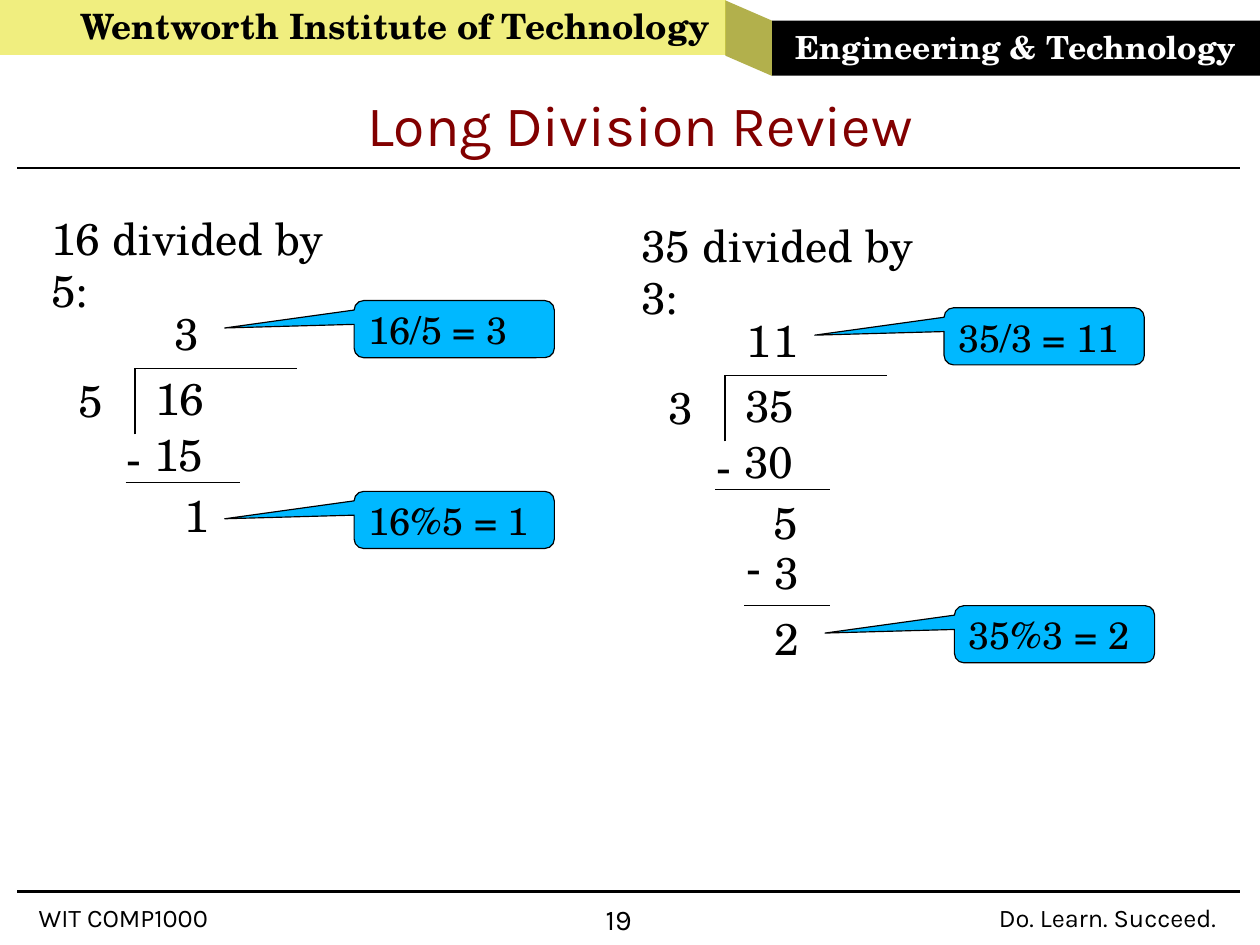
from pptx import Presentation
from pptx.dml.color import RGBColor
from pptx.enum.shapes import MSO_CONNECTOR, MSO_SHAPE
from pptx.enum.text import MSO_ANCHOR, PP_ALIGN
from pptx.oxml.ns import qn
from pptx.util import Cm, Pt
from lxml.etree import SubElement

SERIF = "TeX Gyre Schola"
SANS = "Karla"
BLACK = "000000"
DIGIT, PAIR, DASH = 1.07, 1.63, 0.84


def color(code):
    return RGBColor.from_string(code)


def write(shape, text, size, font=SERIF, ink=BLACK, bold=False, space=0.98,
          align=PP_ALIGN.LEFT, anchor=MSO_ANCHOR.TOP, wrap=True, inset=None):
    frame = shape.text_frame
    frame.word_wrap = wrap
    frame.vertical_anchor = anchor
    if inset is not None:
        left, top = inset
        frame.margin_left, frame.margin_top = Cm(left), Cm(top)
        frame.margin_right = frame.margin_bottom = 0
    para = frame.paragraphs[0]
    para.alignment = align
    para.line_spacing = space
    run = para.add_run()
    run.text = text
    run.font.size = Pt(size)
    run.font.name = font
    run.font.bold = bold
    run.font.color.rgb = color(ink)


def label(slide, text, x, y, width, height=1.42, size=28, **style):
    box = slide.shapes.add_textbox(Cm(x), Cm(y), Cm(width), Cm(height))
    write(box, text, size, **style)


def line(slide, x1, y1, x2, y2, width=0.75):
    rule = slide.shapes.add_connector(
        MSO_CONNECTOR.STRAIGHT, Cm(x1), Cm(y1), Cm(x2), Cm(y2))
    rule.line.color.rgb = color(BLACK)
    rule.line.width = Pt(width)
    SubElement(rule._element.spPr, qn("a:effectLst"))


def block(slide, kind, x, y, width, height, fill, alpha=100):
    shape = slide.shapes.add_shape(kind, Cm(x), Cm(y), Cm(width), Cm(height))
    shape.shadow.inherit = False
    shape.fill.solid()
    shape.fill.fore_color.rgb = color(fill)
    shape.line.fill.background()
    if alpha < 100:
        tone = shape._element.spPr.find(qn("a:solidFill"))[0]
        SubElement(tone, qn("a:alpha")).set("val", str(alpha * 1000))
    return shape


def callout(slide, text, x, y):
    shape = block(slide, MSO_SHAPE.ROUNDED_RECTANGULAR_CALLOUT,
                  x, y, 4.45, 1.27, "00B8FF")
    for index, value in enumerate((-1.146, -0.02, 0.167)):
        shape.adjustments[index] = value
    shape.line.color.rgb = color(BLACK)
    shape.line.width = Pt(0.75)
    write(shape, text, 24)


def header(slide):
    school = block(slide, MSO_SHAPE.RECTANGLE, 0, 0, 16.13, 1.22, "E3DE00", 50)
    write(school, "Wentworth Institute of Technology", 22, bold=True,
          anchor=MSO_ANCHOR.MIDDLE, wrap=False, inset=(1.78, 0))
    fold = block(slide, MSO_SHAPE.PARALLELOGRAM, 15.8, 0.33, 1.68, 1.04, "928F00", 70)
    fold.adjustments[0] = 0.434
    fold.rotation = 90
    field = block(slide, MSO_SHAPE.RECTANGLE, 17.16, 0.46, 10.84, 1.22, BLACK)
    write(field, "Engineering & Technology", 20, ink="FFFFFF", bold=True,
          align=PP_ALIGN.CENTER, anchor=MSO_ANCHOR.MIDDLE)


def footer(slide):
    for text, x, width, size in (("WIT COMP1000", 0.86, 4.9, 16),
                                 ("19", 13.46, 1.02, 18),
                                 ("Do. Learn. Succeed.", 22.2, 5.33, 16)):
        label(slide, text, x, 20.06, width, 0.71, size,
              font=SANS, space=0.93, inset=(0, 0.05))


def heading(slide, text):
    title = slide.shapes.title
    title.left, title.top = Cm(3.43), Cm(0.86)
    title.width, title.height = Cm(21.59), Cm(3.51)
    write(title, text, 36, font=SANS, ink="820000", space=1.17,
          align=PP_ALIGN.CENTER, anchor=MSO_ANCHOR.MIDDLE, inset=(0, 0))


def divide(slide, dx, dy, top, base, quote, part, rest):
    line(slide, dx + 3, dy + 9.65, dx + 3, dy + 8.18)
    line(slide, dx + 3, dy + 8.18, dx + 6.6, dy + 8.18)
    line(slide, dx + 2.79, dy + 10.72, dx + 5.33, dy + 10.72)
    label(slide, f"{top} divided by {base}:", dx + 0.89, dy + 4.62, 7.52)
    for text, x, y, width in ((str(top), 3.2, 8.18, PAIR),
                              (str(base), 1.5, 8.23, DIGIT),
                              (part, 3.18, 9.42, PAIR),
                              ("-", 2.57, 9.5, DASH),
                              (rest, 3.84, 10.77, DIGIT)):
        label(slide, text, dx + x, dy + y, width, wrap=False)
    for digit, x in quote:
        label(slide, digit, dx + x, dy + 6.73, DIGIT, wrap=False)
    whole = "".join(digit for digit, x in quote)
    callout(slide, f"{top}/{base} = {whole}", dx + 7.87, dy + 6.68)


def main():
    deck = Presentation()
    deck.slide_width, deck.slide_height = Cm(28), Cm(21)
    slide = deck.slides.add_slide(deck.slide_layouts[5])
    header(slide)
    footer(slide)
    for y in (3.73, 19.81):
        line(slide, 0.38, y, 27.56, y, 1.5)
    heading(slide, "Long Division Review")

    divide(slide, 0, 0, 16, 5, [("3", 3.63)], "15", "1")
    callout(slide, "16%5 = 1", 7.87, 10.92)

    divide(slide, 13.11, 0.16, 35, 3, [("1", 3.22), ("1", 3.83)], "30", "5")
    label(slide, "3", 16.97, 12.04, DIGIT, wrap=False)
    label(slide, "-", 16.33, 11.91, DASH, wrap=False)
    line(slide, 16.54, 13.46, 18.44, 13.46)
    label(slide, "2", 16.97, 13.51, DIGIT, wrap=False)
    callout(slide, "35%3 = 2", 21.21, 13.46)
    deck.save("out.pptx")


if __name__ == "__main__":
    main()
